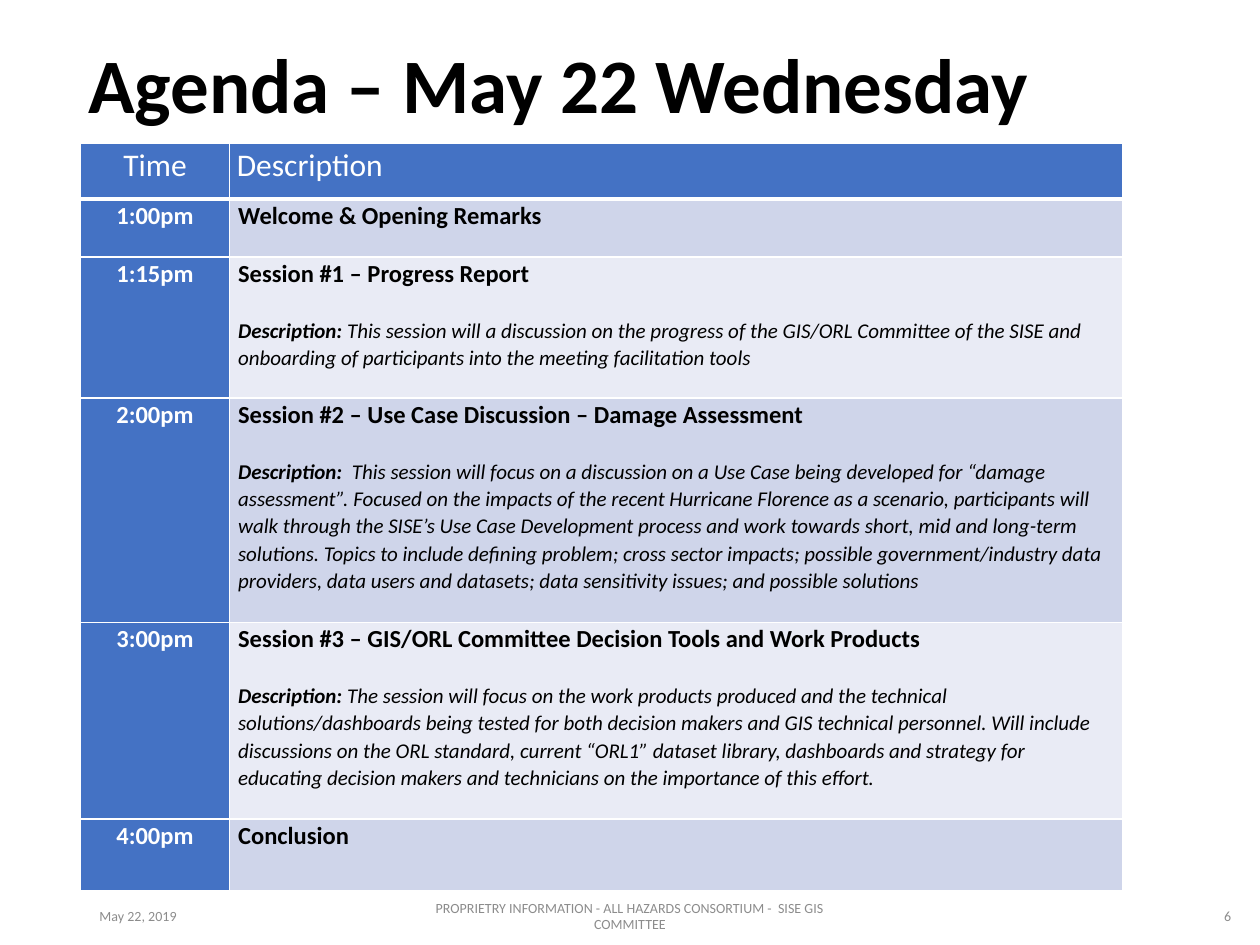
"""Build the Wednesday agenda slide with its session timetable."""
from lxml import etree
from pptx import Presentation
from pptx.dml.color import RGBColor
from pptx.enum import text as t
from pptx.oxml import ns
from pptx.util import Inches, Pt

BLUE, WHITE, BLACK, GREY = "4472C4", "FFFFFF", "000000", "8C8C8C"
BANDS = ["CFD5EA", "E9EBF5"]
LEFT, CENTER, RIGHT = t.PP_ALIGN.LEFT, t.PP_ALIGN.CENTER, t.PP_ALIGN.RIGHT

TITLE = "Agenda – May 22 Wednesday"
HEADINGS = ["Time", "Description"]
SESSIONS = [
    ("1:00pm", "Welcome & Opening Remarks", None, 0.46),
    ("1:15pm", "Session #1 – Progress Report",
     ("Description:", " This session will a discussion on the progress of the GIS/ORL "
      "Committee of the SISE and onboarding of participants into the meeting "
      "facilitation tools"), 1.12),
    ("2:00pm", "Session #2 – Use Case Discussion – Damage Assessment",
     ("Description:  ", "This session will focus on a discussion on a Use Case being "
      "developed for “damage assessment”. Focused on the impacts of the recent "
      "Hurricane Florence as a scenario, participants will walk through the SISE’s "
      "Use Case Development process and work towards short, mid and long-term "
      "solutions. Topics to include defining problem; cross sector impacts; possible "
      "government/industry data providers, data users and datasets; data sensitivity "
      "issues; and possible solutions"), 1.78),
    ("3:00pm", "Session #3 – GIS/ORL Committee Decision Tools and Work Products",
     ("Description:", " The session will focus on the work products produced and the "
      "technical solutions/dashboards being tested for both decision makers and GIS "
      "technical personnel. Will include discussions on the ORL standard, current "
      "“ORL1” dataset library, dashboards and strategy for educating decision makers "
      "and technicians on the importance of this effort."), 1.56),
    ("4:00pm", "Conclusion", None, 0.57),
]
FOOTERS = [
    ("May 22, 2019", 0.69, 2.25, LEFT),
    ("PROPRIETRY INFORMATION - ALL HAZARDS CONSORTIUM -  SISE GIS COMMITTEE",
     3.31, 3.38, CENTER),
    ("6", 7.62, 2.25, RIGHT),
]
COLUMN_WIDTHS = [1.18, 7.09]
HEADING_HEIGHT = 0.44


def rgb(value):
    """Turn a hex string into a colour."""
    return RGBColor.from_string(value)


def write(paragraph, words, size=14, color=BLACK, bold=False, italic=False,
          align=LEFT, spacing=1.0, before=0):
    """Add one formatted run to a paragraph."""
    paragraph.alignment, paragraph.line_spacing = align, spacing
    if before:
        paragraph.space_before = Pt(before)
    run = paragraph.add_run()
    run.text = words
    font = run.font
    font.name, font.size, font.bold, font.italic = "Calibri", Pt(size), bold, italic
    font.color.rgb = rgb(color)


def add_label(slide, words, left, top, width, height, **look):
    """Add a wrapped, vertically centred text box."""
    frame = slide.shapes.add_textbox(*map(Inches, (left, top, width, height))).text_frame
    frame.word_wrap = True
    frame.vertical_anchor = t.MSO_ANCHOR.MIDDLE
    write(frame.paragraphs[0], words, **look)


def style_cell(cell, fill, inset, top=1, bottom=1):
    """Set a cell's fill, insets and white borders."""
    cell.margin_left = cell.margin_right = Inches(inset)
    cell.margin_top = cell.margin_bottom = 0
    cell.fill.solid()
    cell.fill.fore_color.rgb = rgb(fill)
    properties = cell._tc.get_or_add_tcPr()
    for index, (side, width) in enumerate(zip("LRTB", (1, 1, top, bottom))):
        line = etree.Element(ns.qn(f"a:ln{side}"), w=str(Pt(width)))
        solid = etree.SubElement(line, ns.qn("a:solidFill"))
        etree.SubElement(solid, ns.qn("a:srgbClr"), val=WHITE)
        properties.insert(index, line)


def add_agenda(slide):
    """Add the timetable with one row per session."""
    heights = [HEADING_HEIGHT] + [session[-1] for session in SESSIONS]
    table = slide.shapes.add_table(
        len(heights), len(COLUMN_WIDTHS), Inches(0.64), Inches(1.14),
        Inches(sum(COLUMN_WIDTHS)), Inches(sum(heights))).table
    for column, width in zip(table.columns, COLUMN_WIDTHS):
        column.width = Inches(width)
    for row, height in zip(table.rows, heights):
        row.height = Inches(height)
    for column, (heading, align) in enumerate(zip(HEADINGS, (CENTER, LEFT))):
        cell = table.cell(0, column)
        style_cell(cell, BLUE, 0.06, bottom=3)
        write(cell.text_frame.paragraphs[0], heading, size=18, color=WHITE,
              align=align, spacing=1.07)
    for row, (time, topic, description, _) in enumerate(SESSIONS, 1):
        time_cell, topic_cell = table.cell(row, 0), table.cell(row, 1)
        for cell, fill in ((time_cell, BLUE), (topic_cell, BANDS[(row - 1) % 2])):
            style_cell(cell, fill, 0.07, top=3 if row == 1 else 1)
        write(time_cell.text_frame.paragraphs[0], time, color=WHITE, bold=True,
              align=CENTER, spacing=1.07)
        write(topic_cell.text_frame.paragraphs[0], topic, bold=True, spacing=1.07)
        if description:
            details = topic_cell.text_frame.add_paragraph()
            for words, bold in zip(description, (True, False)):
                write(details, words, size=12, bold=bold, italic=True,
                      spacing=1.07, before=15.7)


def main():
    """Assemble and save the slide."""
    deck = Presentation()
    deck.slide_width, deck.slide_height = Inches(10), Inches(7.5)
    slide = deck.slides.add_slide(deck.slide_layouts[6])
    add_label(slide, TITLE, 0.6, 0.29, 8.62, 0.83, size=44, bold=True, spacing=0.9)
    add_agenda(slide)
    for words, left, width, align in FOOTERS:
        add_label(slide, words, left, 7.07, width, 0.4, size=8, color=GREY, align=align)
    deck.save("out.pptx")


if __name__ == "__main__":
    main()
